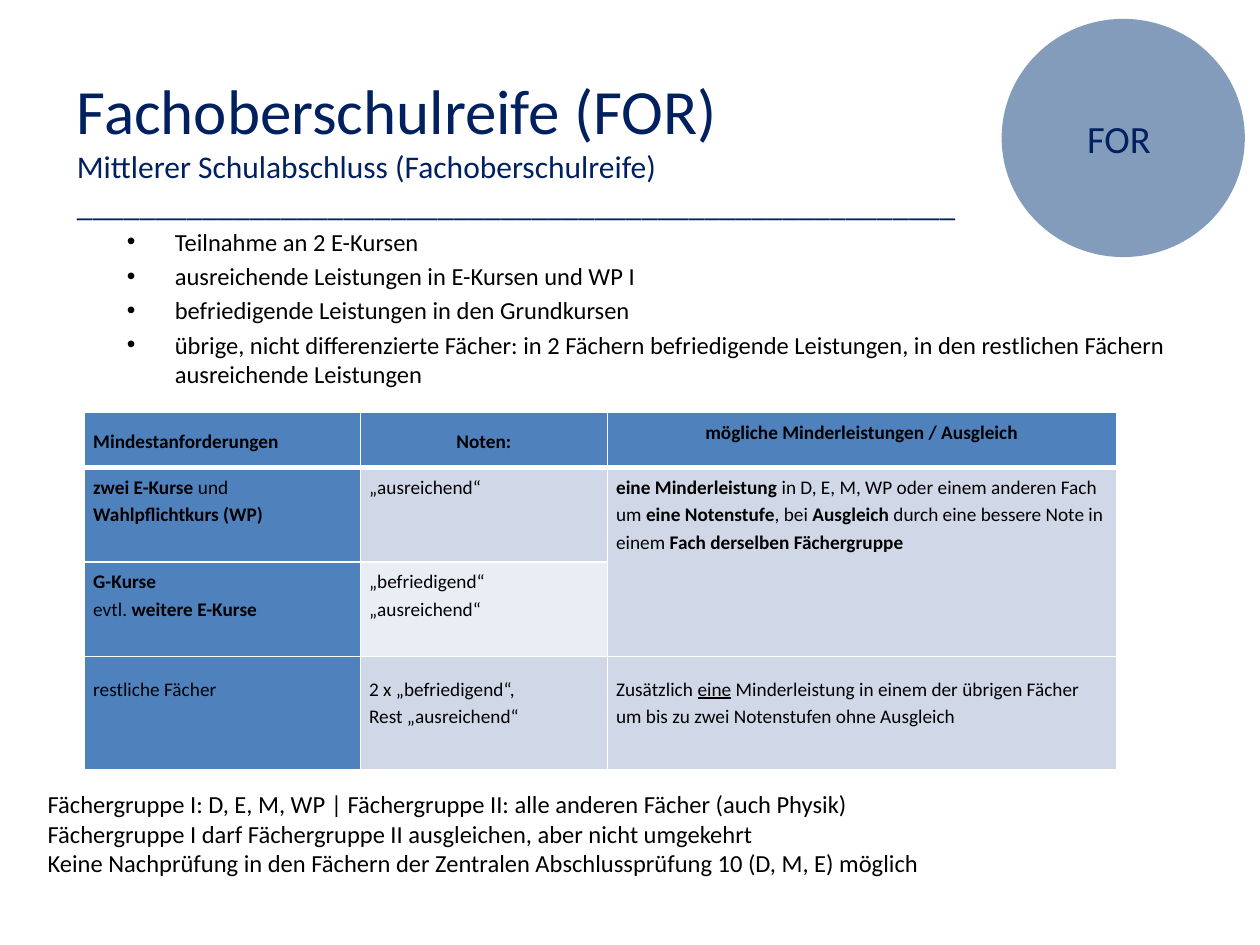
from lxml import etree
from pptx import Presentation
from pptx.dml.color import RGBColor
from pptx.enum import shapes, text
from pptx.oxml import ns
from pptx.util import Inches, Pt

NAVY = RGBColor(0x00, 0x20, 0x60)
BLACK = RGBColor(0x00, 0x00, 0x00)
WHITE = RGBColor(0xFF, 0xFF, 0xFF)
CIRCLE = RGBColor(0x37, 0x60, 0x92)
BLUE = RGBColor(0x4F, 0x81, 0xBD)
BAND = RGBColor(0xD0, 0xD8, 0xE8)
PALE = RGBColor(0xE9, 0xED, 0xF4)
FONT = "Calibri"
LEFT, CENTER = text.PP_ALIGN.LEFT, text.PP_ALIGN.CENTER
TOP, MIDDLE = text.MSO_ANCHOR.TOP, text.MSO_ANCHOR.MIDDLE

# Content: a paragraph is a string or a list of (text, style) runs
HEADING = [
    "Fachoberschulreife (FOR)",
    "Mittlerer Schulabschluss (Fachoberschulreife)",
    "_" * 56,
]
REQUIREMENTS = [
    "Teilnahme an 2 E-Kursen",
    "ausreichende Leistungen in E-Kursen und WP I",
    "befriedigende Leistungen in den Grundkursen",
    "übrige, nicht differenzierte Fächer: in 2 Fächern befriedigende "
    "Leistungen, in den restlichen Fächern ausreichende Leistungen",
]
NOTES = [
    "Fächergruppe I: D, E, M, WP | Fächergruppe II: alle anderen Fächer (auch Physik)",
    "Fächergruppe I darf Fächergruppe II ausgleichen, aber nicht umgekehrt",
    "Keine Nachprüfung in den Fächern der Zentralen Abschlussprüfung 10 (D, M, E) möglich",
]
ROWS = [
    [["Mindestanforderungen"], ["Noten:"], ["mögliche Minderleistungen / Ausgleich"]],
    [
        [[("zwei E-Kurse ", "b"), ("und", "")], [("Wahlpflichtkurs (WP)", "b")]],
        ["„ausreichend“"],
        [[
            ("eine Minderleistung ", "b"),
            ("in D, E, M, WP oder einem anderen Fach um ", ""),
            ("eine Notenstufe", "b"),
            (", bei", ""),
            (" Ausgleich ", "b"),
            ("durch eine bessere Note in einem ", ""),
            ("Fach derselben Fächergruppe", "b"),
        ]],
    ],
    [
        [[("G-Kurse", "b")], [("evtl. ", ""), ("weitere E-Kurse", "b")]],
        ["„befriedigend“", "„ausreichend“"],
        None,
    ],
    [
        ["restliche Fächer"],
        ["2 x „befriedigend“,", "Rest „ausreichend“"],
        [[
            ("Zusätzlich ", ""),
            ("eine", "u"),
            (" Minderleistung in einem der übrigen Fächer um bis zu zwei "
             "Notenstufen ohne Ausgleich", ""),
        ]],
    ],
]
COL_WIDTHS = [2.19, 1.96, 4.04]
ROW_HEIGHTS = [0.44, 0.75, 0.75, 0.9]


def write(tf, paras, sizes=(14,), color=BLACK, align=LEFT, bold=False,
          line=None, gap=0, bullet=False):
    """Fill a text frame; the last size holds for all further paragraphs."""
    for i, para in enumerate(paras):
        p = tf.paragraphs[0] if i == 0 else tf.add_paragraph()
        if bullet:
            pPr = p._p.get_or_add_pPr()
            pPr.set("marL", str(Inches(0.38)))
            pPr.set("indent", str(Inches(-0.38)))
            etree.SubElement(pPr, ns.qn("a:buFont"), typeface="Arial")
            etree.SubElement(pPr, ns.qn("a:buChar"), char="•")
        p.alignment = align
        if line:
            p.line_spacing = line
        if gap and i:
            p.space_before = Pt(gap)
        for words, style in [(para, "")] if isinstance(para, str) else para:
            r = p.add_run()
            r.text = words
            r.font.name = FONT
            r.font.size = Pt(sizes[min(i, len(sizes) - 1)])
            r.font.color.rgb = color
            r.font.bold = bold or style == "b"
            r.font.underline = style == "u"


def place(sp, left, top, width, height):
    sp.left, sp.top, sp.width, sp.height = map(Inches, (left, top, width, height))


def add_text(s, box, paras, **fmt):
    tf = s.shapes.add_textbox(*map(Inches, box)).text_frame
    tf.word_wrap = True
    write(tf, paras, **fmt)
    return tf


def set_borders(cell, **widths):
    tcPr = cell._tc.get_or_add_tcPr()
    for side in "LRTB":
        ln = etree.SubElement(tcPr, ns.qn("a:ln" + side), w=str(Pt(widths.get(side, 1))))
        fill = etree.SubElement(ln, ns.qn("a:solidFill"))
        etree.SubElement(fill, ns.qn("a:srgbClr"), val=str(WHITE))


def add_grades_table(s):
    box = map(Inches, (0.67, 3.27, sum(COL_WIDTHS), sum(ROW_HEIGHTS)))
    table = s.shapes.add_table(len(ROWS), len(COL_WIDTHS), *box).table
    for col, width in zip(table.columns, COL_WIDTHS):
        col.width = Inches(width)
    for row, height in zip(table.rows, ROW_HEIGHTS):
        row.height = Inches(height)
    table.cell(1, 2).merge(table.cell(2, 2))
    last = len(ROWS) - 1
    for i, row in enumerate(ROWS):
        for j, paras in enumerate(row):
            cell = table.cell(i, j)
            header = i == 0
            set_borders(cell, T=3 if i == 1 else 1, B=3 if header else 1)
            cell.fill.solid()
            cell.fill.fore_color.rgb = (
                BLUE if header or j == 0 else PALE if (i, j) == (2, 1) else BAND)
            cell.margin_left = cell.margin_right = Inches(0.07)
            cell.margin_top = Inches(0.14 if i == last else 0.04)
            cell.margin_bottom = Inches(0.04)
            cell.vertical_anchor = MIDDLE if header and j < 2 else TOP
            if paras:
                write(cell.text_frame, paras, sizes=(11,), bold=header, line=1.15,
                      align=CENTER if header and j else LEFT)


def main():
    prs = Presentation()
    prs.slide_width, prs.slide_height = Inches(10), Inches(7.5)
    s = prs.slides.add_slide(prs.slide_layouts[5])

    # Heading
    title = s.shapes.title
    place(title, 0.51, 0.52, 7.27, 1.31)
    tf = title.text_frame
    tf.word_wrap = False
    tf.auto_size = text.MSO_AUTO_SIZE.NONE
    tf.vertical_anchor = TOP
    write(tf, HEADING, sizes=(36, 18), color=NAVY)

    # Circle badge
    sp = s.shapes.add_shape(shapes.MSO_SHAPE.FLOWCHART_CONNECTOR,
                            *map(Inches, (7.95, 0.15, 1.93, 1.89)))
    sp.shadow.inherit = False
    sp.fill.solid()
    sp.fill.fore_color.rgb = CIRCLE
    color = sp._element.spPr.find(".//" + ns.qn("a:srgbClr"))
    etree.SubElement(color, ns.qn("a:alpha"), val="62000")
    sp.line.fill.background()
    sp.text_frame.vertical_anchor = MIDDLE
    write(sp.text_frame, ["FOR "], sizes=(22,), color=NAVY, align=CENTER)

    # Requirements, grades and notes
    add_text(s, (0.91, 1.75, 8.74, 1.45), REQUIREMENTS, gap=2.8, bullet=True)
    add_grades_table(s)
    tf = add_text(s, (0.28, 6.11, 9, 1.25), NOTES)
    tf.vertical_anchor = MIDDLE
    tf.margin_bottom = Inches(0.29)

    prs.save("out.pptx")


if __name__ == "__main__":
    main()
